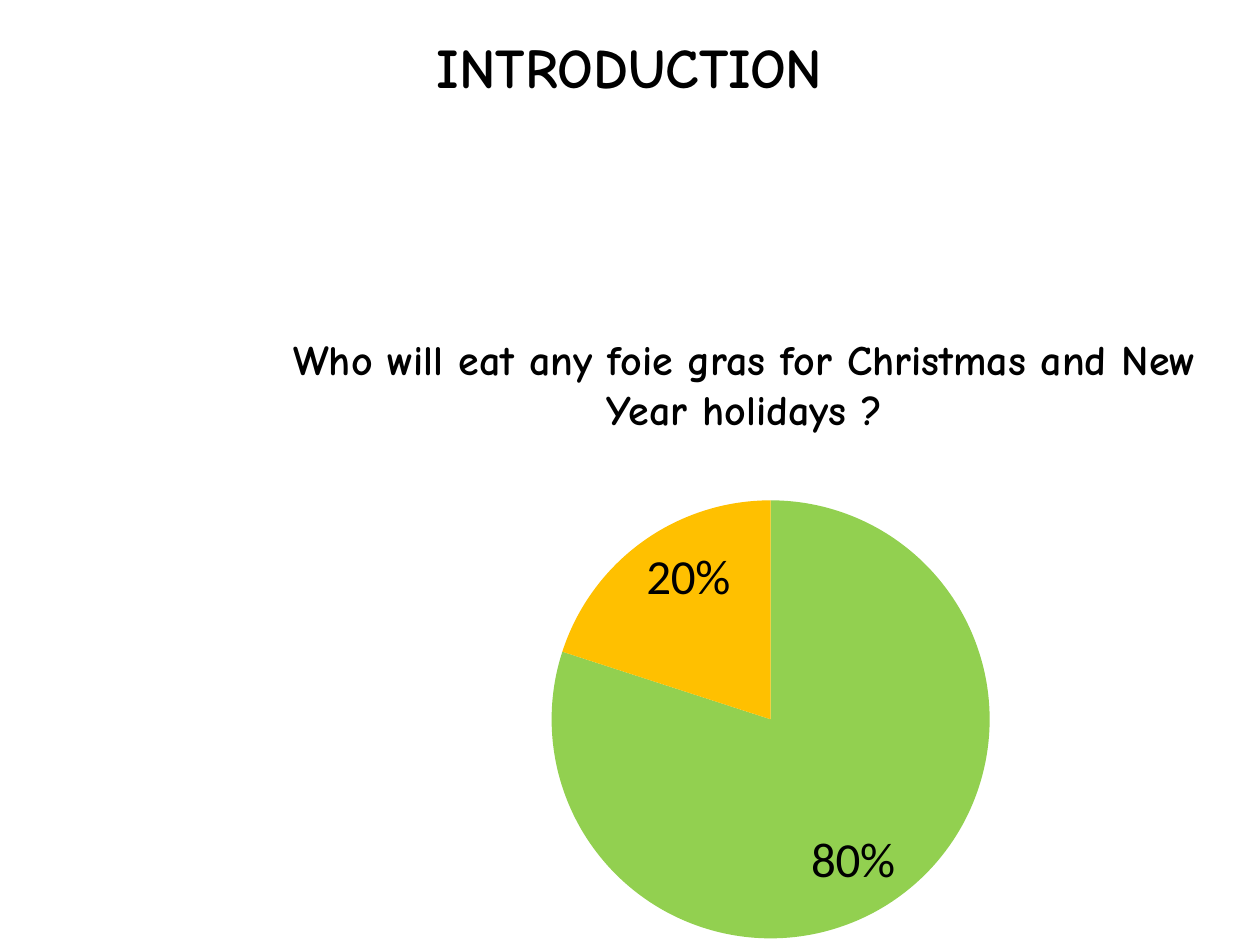
from dataclasses import dataclass

from lxml import etree
from pptx import Presentation
from pptx.chart.data import CategoryChartData
from pptx.dml.color import RGBColor
from pptx.enum.chart import XL_CHART_TYPE, XL_LABEL_POSITION
from pptx.enum.text import MSO_ANCHOR, PP_ALIGN
from pptx.oxml.ns import qn
from pptx.util import Cm, Pt

BLACK = RGBColor(0x00, 0x00, 0x00)
GREEN = RGBColor(0x92, 0xD0, 0x50)
AMBER = RGBColor(0xFF, 0xC0, 0x00)
PIE = XL_CHART_TYPE.PIE
INSIDE_END = XL_LABEL_POSITION.INSIDE_END
CENTER = PP_ALIGN.CENTER
TOP = MSO_ANCHOR.TOP
TITLE_ONLY = 5


@dataclass(frozen=True)
class Area:
    left: float
    top: float
    width: float
    height: float

    def lengths(self):
        return Cm(self.left), Cm(self.top), Cm(self.width), Cm(self.height)


@dataclass(frozen=True)
class Heading:
    text: str
    area: Area
    size: int


@dataclass(frozen=True)
class Answer:
    category: str
    share: int
    color: RGBColor


TITLE = Heading("INTRODUCTION", Area(6.6, 0.53, 12.19, 1.63), 32)
QUESTION = Heading(
    "Who will eat any foie gras for Christmas and New Year holidays ?",
    Area(5.51, 6.6, 19, 2.31),
    24,
)
CHART_AREA = Area(5.64, 8.84, 18.85, 10.39)
PLOT_LAYOUT = {"x": 0.29, "y": 0.12, "w": 0.47, "h": 0.85}
ANSWERS = [Answer("1", 80, GREEN), Answer("2", 20, AMBER)]


def set_font(font, size: int, name: str, bold: bool) -> None:
    formats = {"size": Pt(size), "name": name, "bold": bold}
    for attribute, value in formats.items():
        setattr(font, attribute, value)
    font.color.rgb = BLACK


def write_heading(box, heading: Heading) -> None:
    box.left, box.top, box.width, box.height = heading.area.lengths()
    frame = box.text_frame
    frame.word_wrap = True
    frame.vertical_anchor = TOP
    paragraph = frame.paragraphs[0]
    paragraph.alignment = CENTER
    span = paragraph.add_run()
    span.text = heading.text
    set_font(span.font, heading.size, "Comic Neue", True)


def place_plot(chart, layout: dict[str, float]) -> None:
    plot_area = chart.plots[0]._element.getparent()
    for old in plot_area.findall(qn("c:layout")):
        plot_area.remove(old)
    holder = etree.Element(qn("c:layout"))
    manual = etree.SubElement(holder, qn("c:manualLayout"))
    settings = {"layoutTarget": "inner", "xMode": "edge", "yMode": "edge"}
    for tag, value in (settings | layout).items():
        etree.SubElement(manual, qn(f"c:{tag}")).set("val", str(value))
    plot_area.insert(0, holder)


def draw_pie(page, answers: list[Answer]) -> None:
    data = CategoryChartData()
    data.categories = [answer.category for answer in answers]
    data.add_series("Series 1", [answer.share for answer in answers])
    chart = page.shapes.add_chart(PIE, *CHART_AREA.lengths(), data).chart
    chart.has_title = False
    chart.has_legend = False
    set_font(chart.font, 10, "Calibri", False)
    plot = chart.plots[0]
    plot.vary_by_categories = True
    for index, answer in enumerate(answers):
        fill = plot.series[0].points[index].format.fill
        fill.solid()
        fill.fore_color.rgb = answer.color
    plot.has_data_labels = True
    labels = plot.data_labels
    formats = {
        "show_percentage": True,
        "show_value": False,
        "number_format": "0%",
        "number_format_is_linked": False,
        "position": INSIDE_END,
    }
    for attribute, value in formats.items():
        setattr(labels, attribute, value)
    set_font(labels.font, 28, "Calibri", False)
    place_plot(chart, PLOT_LAYOUT)


def main() -> None:
    deck = Presentation()
    deck.slide_width, deck.slide_height = Cm(25.4), Cm(19.05)
    page = deck.slides.add_slide(deck.slide_layouts[TITLE_ONLY])
    write_heading(page.shapes.title, TITLE)
    question_box = page.shapes.add_textbox(*QUESTION.area.lengths())
    write_heading(question_box, QUESTION)
    draw_pie(page, ANSWERS)
    deck.save("out.pptx")


if __name__ == "__main__":
    main()
